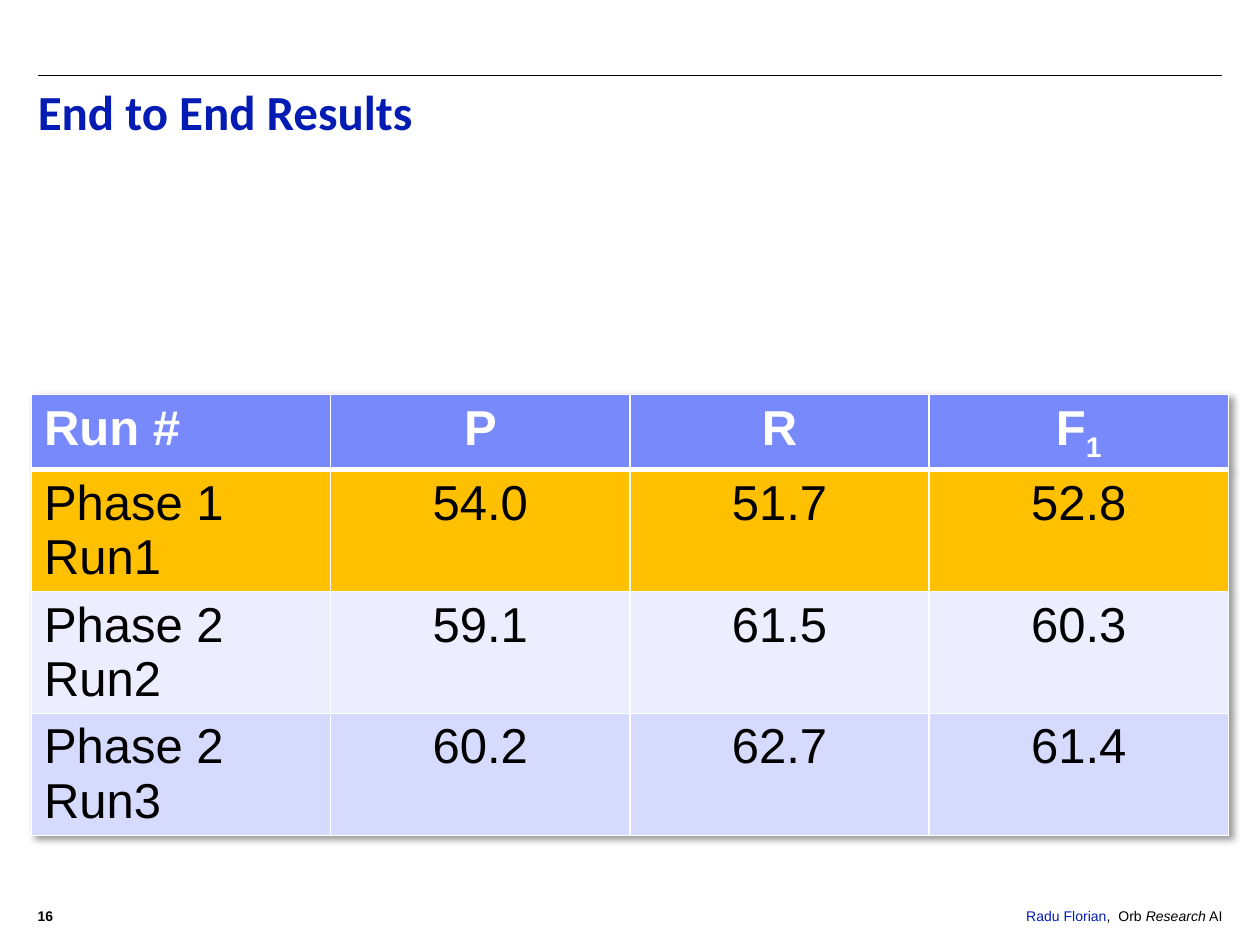
import dataclasses

import lxml.etree
import pptx
import pptx.dml.color
import pptx.enum.shapes
import pptx.enum.text
import pptx.oxml
import pptx.oxml.ns
import pptx.util

Pt = pptx.util.Pt
ALIGN = pptx.enum.text.PP_ALIGN
ANCHOR = pptx.enum.text.MSO_ANCHOR
qn = pptx.oxml.ns.qn


@dataclasses.dataclass(frozen=True)
class Theme:
    black: str = "000000"
    white: str = "FFFFFF"
    blue: str = "051CB4"
    head: str = "7889FB"
    rows: tuple = ("FFC000", "ECEDFE", "D6DAFD")
    body: str = "Arial"
    title: str = "Calibri"
    large: int = 28
    small: int = 8


THEME = Theme()

HEADS = ("Run #", "P", "R", "F")
ROWS = (
    ("Phase 1 Run1", "54.0", "51.7", "52.8"),
    ("Phase 2 Run2", "59.1", "61.5", "60.3"),
    ("Phase 2 Run3", "60.2", "62.7", "61.4"),
)


def color(code):
    return pptx.dml.color.RGBColor.from_string(code)


def apply(target, values):
    for name, value in values.items():
        setattr(target, name, value)


def add_run(para, text, size, code, face=THEME.body, **more):
    run = para.add_run()
    run.text = text
    apply(run.font, {"size": Pt(size), "name": face, **more})
    run.font.color.rgb = color(code)
    return run


def add_title(slide, text):
    title = slide.shapes.title
    apply(title, {"left": Pt(14.4), "top": Pt(46.8),
                  "width": Pt(684), "height": Pt(50.4)})
    apply(title.text_frame, {"vertical_anchor": ANCHOR.TOP, "word_wrap": True})
    para = title.text_frame.paragraphs[0]
    apply(para, {"alignment": ALIGN.LEFT, "line_spacing": 0.9})
    add_run(para, text, THEME.large, THEME.blue, THEME.title, bold=True)


def add_rule(slide):
    rule = slide.shapes.add_connector(
        pptx.enum.shapes.MSO_CONNECTOR.STRAIGHT,
        Pt(21.6), Pt(43.2), Pt(698.4), Pt(43.2))
    rule.line.color.rgb = color(THEME.black)
    rule.line.width = Pt(0.75)
    lxml.etree.SubElement(rule._element.spPr, qn("a:effectLst"))


def add_note(slide, left, width, align, runs):
    box = slide.shapes.add_textbox(Pt(left), Pt(514.8), Pt(width), Pt(14.4))
    box.text_frame.word_wrap = True
    para = box.text_frame.paragraphs[0]
    para.alignment = align
    for text, code, more in runs:
        add_run(para, text, THEME.small, code, **more)


def add_edge(cell, side, width):
    edge = lxml.etree.SubElement(
        cell._tc.get_or_add_tcPr(), qn(f"a:ln{side}"), w=str(Pt(width)))
    fill = lxml.etree.SubElement(edge, qn("a:solidFill"))
    lxml.etree.SubElement(fill, qn("a:srgbClr"), val=THEME.white)


def fill_cell(cell, text, row, col):
    # Borders: the heavy one parts the header from the body
    widths = {"L": 1, "R": 1, "T": 3 if row == 1 else 1,
              "B": 3 if row == 0 else 1}
    for side, width in widths.items():
        add_edge(cell, side, width)
    cell.fill.solid()
    cell.fill.fore_color.rgb = color((THEME.head, *THEME.rows)[row])

    para = cell.text_frame.paragraphs[0]
    para.alignment = ALIGN.CENTER if col else ALIGN.LEFT
    code = THEME.black if row else THEME.white
    bold = row == 0
    add_run(para, text, THEME.large, code, bold=bold)
    if text == "F":
        sub = add_run(para, "1", THEME.large, code, bold=bold)
        sub._r.get_or_add_rPr().set("baseline", "-25000")


def add_shade(table):
    props = table._tbl.tblPr
    props.insert(0, pptx.oxml.parse_xml(
        '<a:effectLst xmlns:a="http://schemas.openxmlformats.org/'
        'drawingml/2006/main"><a:outerShdw blurRad="50800" dist="38100" '
        'dir="2700000" algn="tl" rotWithShape="0"><a:prstClr val="black">'
        '<a:alpha val="40000"/></a:prstClr></a:outerShdw></a:effectLst>'))


def add_grid(slide, data):
    table = slide.shapes.add_table(
        len(data), len(data[0]), Pt(18), Pt(225.4), Pt(684), Pt(163.4)).table
    table.horz_banding = False
    add_shade(table)
    for col in table.columns:
        col.width = Pt(684 / len(data[0]))
    for row, texts in enumerate(data):
        table.rows[row].height = Pt(29.5)
        for col, text in enumerate(texts):
            fill_cell(table.cell(row, col), text, row, col)


def main():
    deck = pptx.Presentation()
    apply(deck, {"slide_width": Pt(720), "slide_height": Pt(540)})
    slide = deck.slides.add_slide(deck.slide_layouts.get_by_name("Title Only"))

    # Heading
    add_rule(slide)
    add_title(slide, "End to End Results")

    # Scores
    add_grid(slide, (HEADS, *ROWS))

    # Footer
    add_note(slide, 14.4, 28.8, ALIGN.LEFT,
             [("16", THEME.black, {"bold": True})])
    add_note(slide, 568.1, 137.5, ALIGN.RIGHT, [
        ("Radu Florian", THEME.blue, {}),
        (",  Orb ", THEME.black, {}),
        ("Research", THEME.black, {"italic": True}),
        (" AI", THEME.black, {}),
    ])

    deck.save("out.pptx")


if __name__ == "__main__":
    main()
